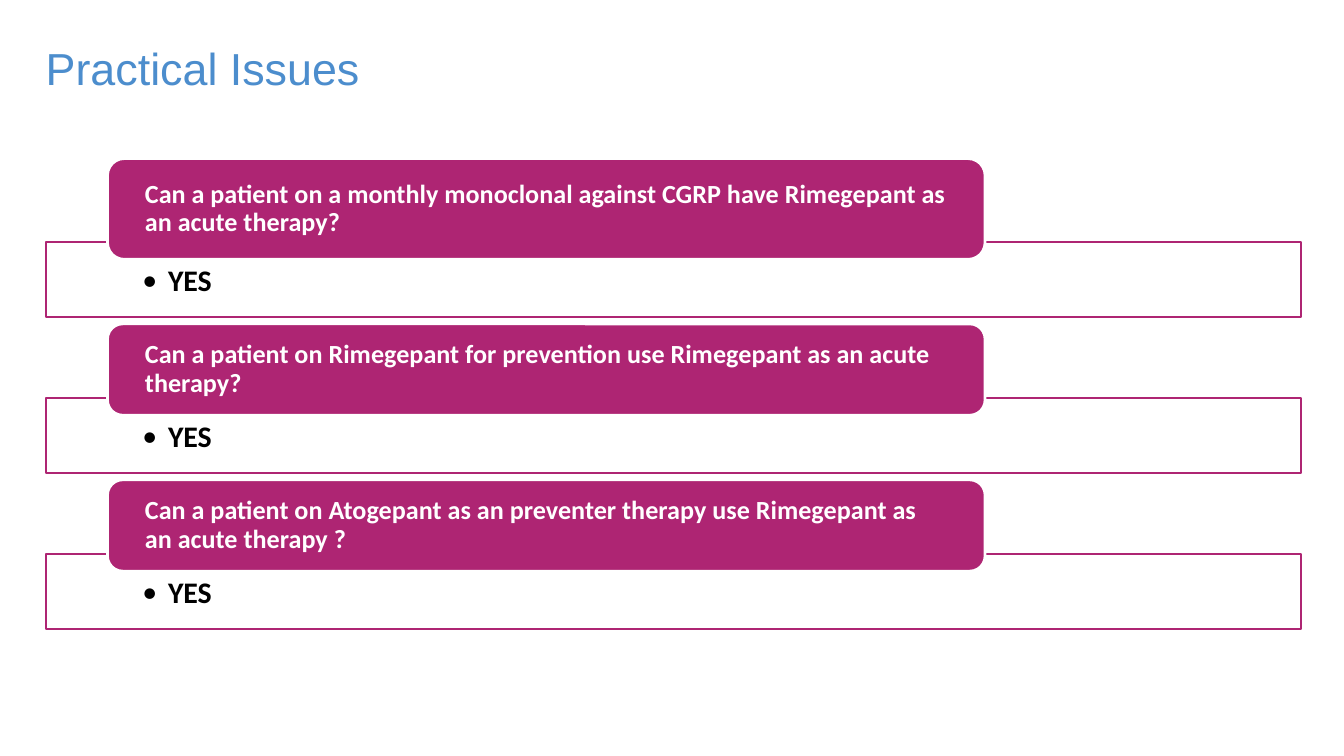
"""Build the Practical Issues slide of questions and answers."""
from dataclasses import dataclass

from lxml.etree import SubElement
from pptx import Presentation
from pptx.dml.color import RGBColor
from pptx.dml.fill import FillFormat
from pptx.enum.shapes import MSO_SHAPE
from pptx.enum.text import MSO_ANCHOR, MSO_AUTO_SIZE, PP_ALIGN
from pptx.oxml.ns import qn
from pptx.shapes.autoshape import Shape
from pptx.slide import Slide
from pptx.text.text import TextFrame
from pptx.util import Inches, Pt

COLOURS = {
    "title": "005EB8",
    "accent": "AE2573",
    "white": "FFFFFF",
    "black": "000000",
}
FIRST_ANSWER_TOP = 1.8
ANSWER_STEP = 1.16
ANSWER_HEIGHT = 0.56
OVERLAP = 0.13
QUESTION_INDENT = 0.28
CORNER_INSET_RATIO = 0.05


@dataclass(frozen=True)
class Issue:
    question: str
    answer: str
    question_height: float = 0.68


ISSUES = [
    Issue("Can a patient on a monthly monoclonal against CGRP have Rimegepant as an acute therapy?", "YES", 0.75),
    Issue("Can a patient on Rimegepant for prevention use Rimegepant as an acute therapy?", "YES"),
    Issue("Can a patient on Atogepant as an preventer therapy use Rimegepant as an acute therapy ?", "YES"),
]


def colour(name: str) -> RGBColor:
    return RGBColor.from_string(COLOURS[name])


def set_fill(fill: FillFormat, name: str, opacity: int = 100) -> None:
    fill.solid()
    fill.fore_color.rgb = colour(name)
    if opacity < 100:
        solid = fill._xPr.find(qn("a:solidFill"))
        SubElement(solid[0], qn("a:alpha"), val=str(opacity * 1000))


def set_frame(frame: TextFrame, anchor: MSO_ANCHOR, side: float, top: float = 0, bottom: float = 0) -> None:
    frame.word_wrap = True
    frame.auto_size = MSO_AUTO_SIZE.NONE
    frame.vertical_anchor = anchor
    frame.margin_left = frame.margin_right = Inches(side)
    frame.margin_top, frame.margin_bottom = Inches(top), Inches(bottom)


def write(frame: TextFrame, text: str, font: str, size: float, ink: str,
          bold: bool = False, opacity: int = 100, bullet: bool = False) -> None:
    paragraph = frame.paragraphs[0]
    paragraph.alignment = PP_ALIGN.LEFT
    paragraph.line_spacing = 0.9
    if bullet:
        paragraph.level = 1
        properties = paragraph._p.get_or_add_pPr()
        properties.set("marL", str(Inches(0.19)))
        properties.set("indent", str(Inches(-0.19)))
        SubElement(properties, qn("a:buFont"), typeface=font)
        SubElement(properties, qn("a:buChar"), char="•")
        paragraph.font.size = Pt(size)
    run = paragraph.add_run()
    run.text = text
    run.font.name, run.font.size, run.font.bold = font, Pt(size), bold
    set_fill(run.font.fill, ink, opacity)


def add_box(slide: Slide, kind: MSO_SHAPE, left: float, top: float, width: float, height: float,
            fill: str, line: str, line_width: float, opacity: int = 100) -> Shape:
    box = slide.shapes.add_shape(kind, Inches(left), Inches(top), Inches(width), Inches(height))
    box.shadow.inherit = False
    set_fill(box.fill, fill, opacity)
    box.line.color.rgb = colour(line)
    box.line.width = Pt(line_width)
    return box


def add_issue(slide: Slide, issue: Issue, answer_top: float) -> None:
    answer = add_box(slide, MSO_SHAPE.RECTANGLE, 0.34, answer_top, 9.34, ANSWER_HEIGHT,
                     "white", "accent", 1, 90)
    set_frame(answer.text_frame, MSO_ANCHOR.TOP, 0.72, 0.18, 0.12)
    write(answer.text_frame, issue.answer, "Calibri", 16, "black", bold=True, bullet=True)

    question_top = answer_top + OVERLAP - issue.question_height
    question = add_box(slide, MSO_SHAPE.ROUNDED_RECTANGLE, 0.8, question_top, 6.53,
                       issue.question_height, "accent", "white", 1.5)
    side = QUESTION_INDENT - CORNER_INSET_RATIO * issue.question_height
    set_frame(question.text_frame, MSO_ANCHOR.MIDDLE, side)
    write(question.text_frame, issue.question, "Calibri", 14, "white", bold=True)


def main() -> None:
    presentation = Presentation()
    presentation.slide_width = Inches(10)
    presentation.slide_height = presentation.slide_width * 9 // 16
    slide = presentation.slides.add_slide(presentation.slide_layouts.get_by_name("Title Only"))

    title = slide.shapes.title
    title.left, title.top = Inches(0.34), Inches(0.23)
    title.width, title.height = Inches(7.28), Inches(0.59)
    set_frame(title.text_frame, MSO_ANCHOR.MIDDLE, 0)
    write(title.text_frame, "Practical Issues", "Arial", 24, "title", opacity=70)

    for row, issue in enumerate(ISSUES):
        add_issue(slide, issue, FIRST_ANSWER_TOP + row * ANSWER_STEP)
    presentation.save("out.pptx")


if __name__ == "__main__":
    main()
